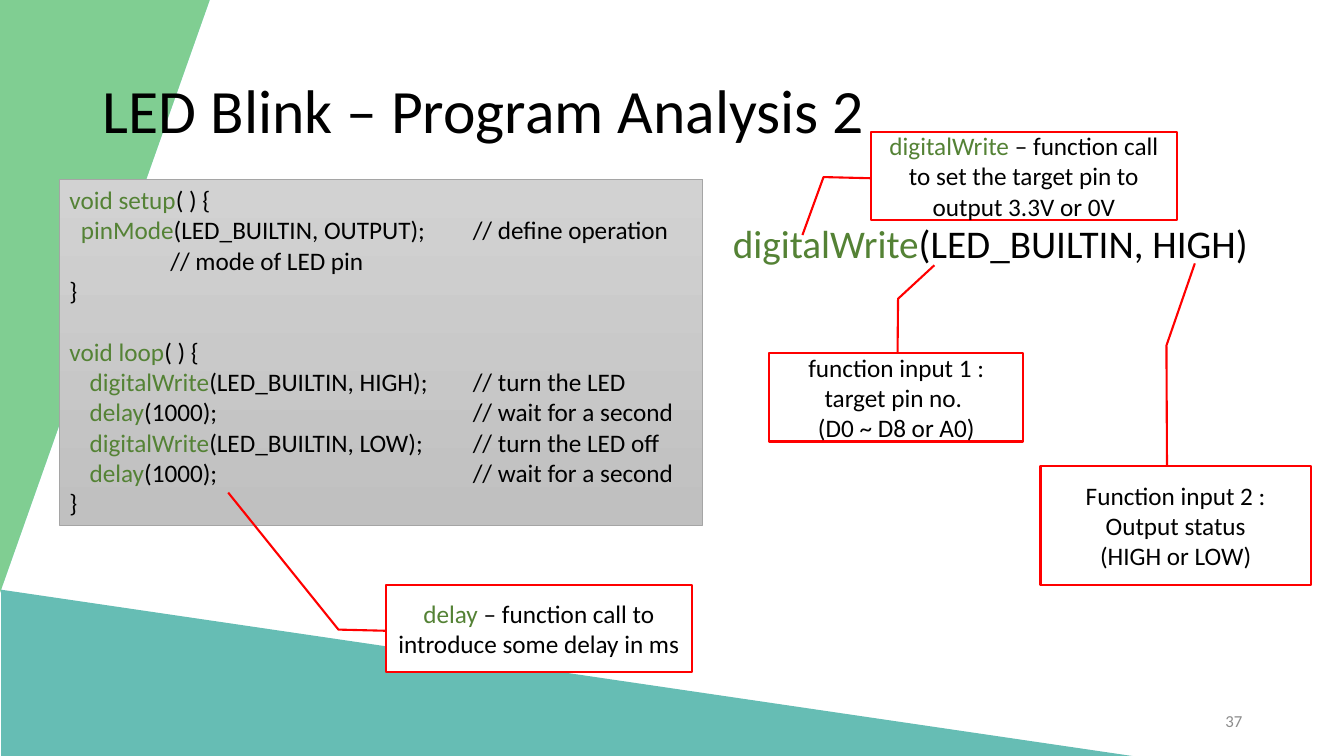
from lxml.etree import SubElement
from pptx import Presentation
from pptx.dml.color import RGBColor
from pptx.enum.shapes import MSO_SHAPE
from pptx.enum.text import MSO_ANCHOR, PP_ALIGN
from pptx.oxml.ns import qn
from pptx.util import Inches, Pt

HUES = {
    "blue": "00ADEF", "lime": "92D050", "teal": "009183",
    "code": "548235", "text": "000000", "page": "8C8C8C",
    "box": "FFFFFF", "edge": "FF0000", "rim": "A5A5A5",
    "light": "D2D2D2", "dark": "C0C0C0",
}
CODE = [
    "void setup|( ) {",
    "  pinMode|(LED_BUILTIN, OUTPUT);\t// define operation",
    "|\t\t// mode of LED pin",
    "|}",
    "void loop|( ) {",
    "\tdigitalWrite|(LED_BUILTIN, HIGH);\t// turn the LED",
    "\tdelay|(1000);\t// wait for a second",
    "\tdigitalWrite|(LED_BUILTIN, LOW);\t// turn the LED off",
    "\tdelay|(1000);\t// wait for a second",
    "|}",
]
SIDE = (0.527, -0.002, 0.514, -0.156)
NOTES = [
    ((64.82, 17.47, 22.73, 11.6), (*SIDE, 1.175, -0.225),
     ["digitalWrite |– function call to set the target pin to output 3.3V or 0V"]),
    ((77.42, 61.6, 20.11, 15.73), (-0.001, 0.468, -1.011, 0.466, -1.701, 0.571),
     ["|Function input 2 : Output status", "|(HIGH or LOW)"]),
    ((57.24, 46.67, 18.9, 11.73), (0.011, 0.505, -0.61, 0.507, -0.988, 0.65),
     ["|function input 1 : target pin no. ", "|(D0 ~ D8 or A0)"]),
    ((28.73, 77.33, 22.73, 11.6), (*SIDE, -1.049, -0.517),
     ["delay |– function call to introduce some delay in ms"]),
]


def hue(name):
    return RGBColor.from_string(HUES[name])


class Deck:
    """Places elements by (left, top, width, height) in percent of the slide."""
    face = "Calibri"
    size = 18

    def __init__(self):
        self.prs = Presentation()
        self.prs.slide_width, self.prs.slide_height = Inches(13.33), Inches(7.5)
        self.slide = self.prs.slides.add_slide(self.prs.slide_layouts[5])

    def area(self, at):
        wide, high = self.prs.slide_width, self.prs.slide_height
        return [int(part * full / 100) for part, full in zip(at, (wide, high) * 2)]

    def words(self, shape, lines, size=size, ink="text", align=PP_ALIGN.LEFT,
              anchor=MSO_ANCHOR.MIDDLE, space=1.0):
        """Fill a shape; each line reads 'keyword|rest', the keyword in green."""
        frame = shape.text_frame
        frame.word_wrap, frame.vertical_anchor = True, anchor
        for i, line in enumerate(lines):
            para = frame.paragraphs[0] if i == 0 else frame.add_paragraph()
            para.alignment, para.line_spacing = align, space
            for part, tone in zip(line.split("|"), ("code", ink)):
                if part:
                    run = para.add_run()
                    run.text = part
                    run.font.name, run.font.size = self.face, Pt(size)
                    run.font.color.rgb = hue(tone)

    def title(self, at, text):
        head = self.slide.shapes.title
        head.left, head.top, head.width, head.height = self.area(at)
        self.words(head, ["|" + text], 44, space=0.9)
        head.element.getparent().append(head.element)

    def label(self, at, text, **style):
        self.words(self.slide.shapes.add_textbox(*self.area(at)), [text], **style)

    def shape(self, kind, at, fill=None, line=None, width=1.5):
        item = self.slide.shapes.add_shape(kind, *self.area(at))
        item.shadow.inherit = False
        if fill:
            item.fill.solid()
            item.fill.fore_color.rgb = hue(fill)
        if line:
            item.line.color.rgb = hue(line)
            item.line.width = Pt(width)
        else:
            item.line.fill.background()
        return item

    def wedge(self, at, fill, turn=0):
        item = self.shape(MSO_SHAPE.RIGHT_TRIANGLE, at, fill)
        item.rotation = turn
        tint = item.element.spPr.find(".//" + qn("a:srgbClr"))
        SubElement(tint, qn("a:alpha"), val="60000")

    def code(self, at, lines, stops=(0.2, 1, 4)):
        item = self.shape(MSO_SHAPE.RECTANGLE, at, line="rim", width=0.5)
        item.fill.gradient()
        item.fill.gradient_angle = 270
        for stop, tone in zip(item.fill.gradient_stops, ("light", "dark")):
            stop.color.rgb = hue(tone)
        self.words(item, lines, anchor=MSO_ANCHOR.TOP)
        for para in item.text_frame.paragraphs:
            tabs = SubElement(para._p.get_or_add_pPr(), qn("a:tabLst"))
            for stop in stops:
                SubElement(tabs, qn("a:tab"), pos=str(Inches(stop)), algn="l")
            if para.text.startswith("void loop"):
                para.space_before = Pt(22)

    def note(self, at, bends, lines):
        item = self.shape(MSO_SHAPE.LINE_CALLOUT_2, at, "box", "edge")
        for i, bend in enumerate(bends):
            item.adjustments[i] = bend
        self.words(item, lines, align=PP_ALIGN.CENTER)


def main():
    deck = Deck()
    for fill in ("blue", "lime"):
        deck.wedge((-14.25, 25.33, 44.11, 27.73), fill, 90)
    deck.wedge((0.08, 78, 84.17, 22), "teal")
    deck.title((6.9, 5.33, 86.27, 19.33), "LED Blink – Program Analysis 2")
    deck.label((53.79, 29.07, 42.61, 57.2), "digitalWrite|(LED_BUILTIN, HIGH)",
               size=28, anchor=MSO_ANCHOR.TOP, space=0.9)
    deck.code((4.43, 23.73, 47.86, 45.73), CODE)
    for at, bends, lines in NOTES:
        deck.note(at, bends, lines)
    deck.label((70.67, 92.67, 22.51, 5.33), "|37", size=12, ink="page",
               align=PP_ALIGN.RIGHT)
    deck.prs.save("out.pptx")


if __name__ == "__main__":
    main()
